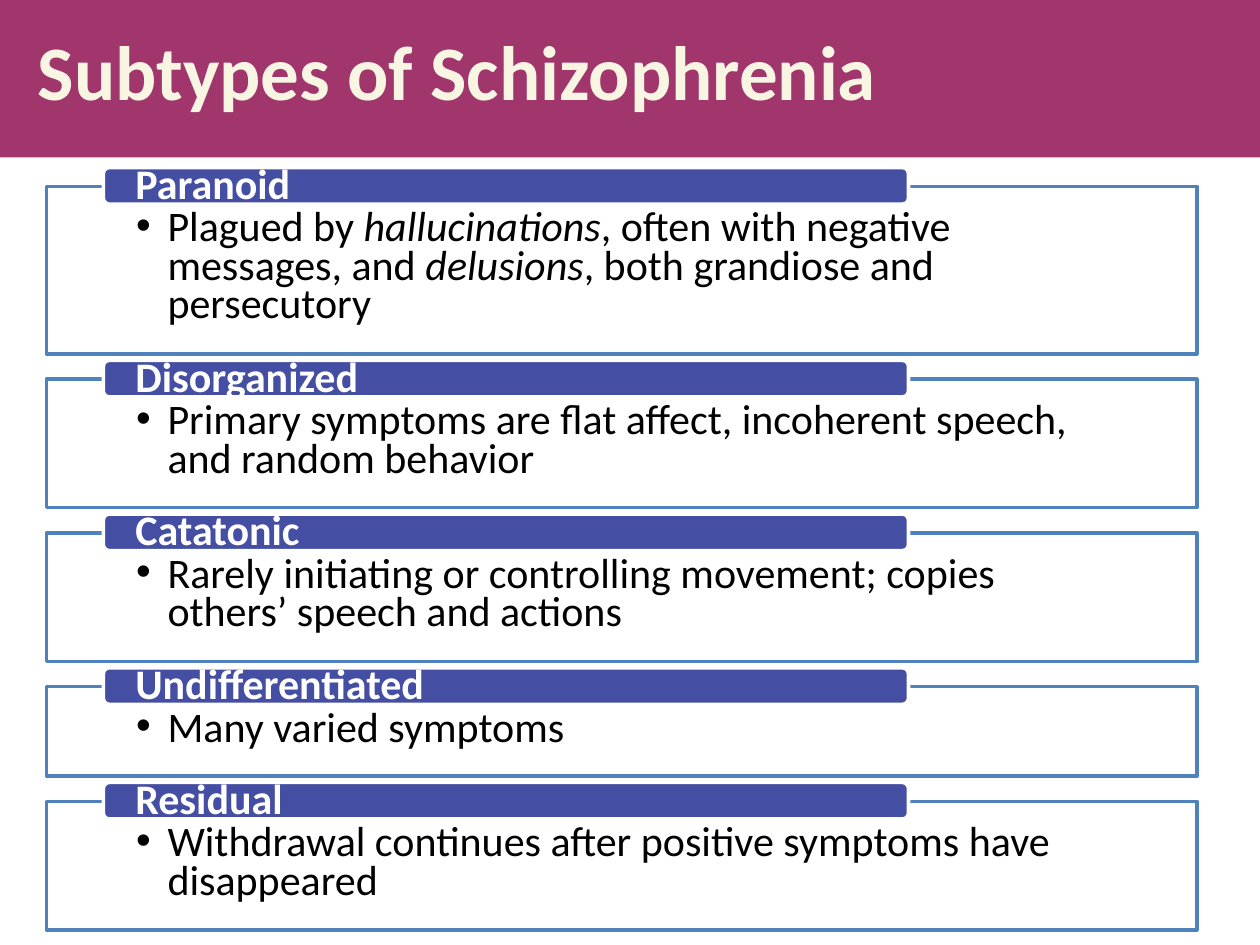
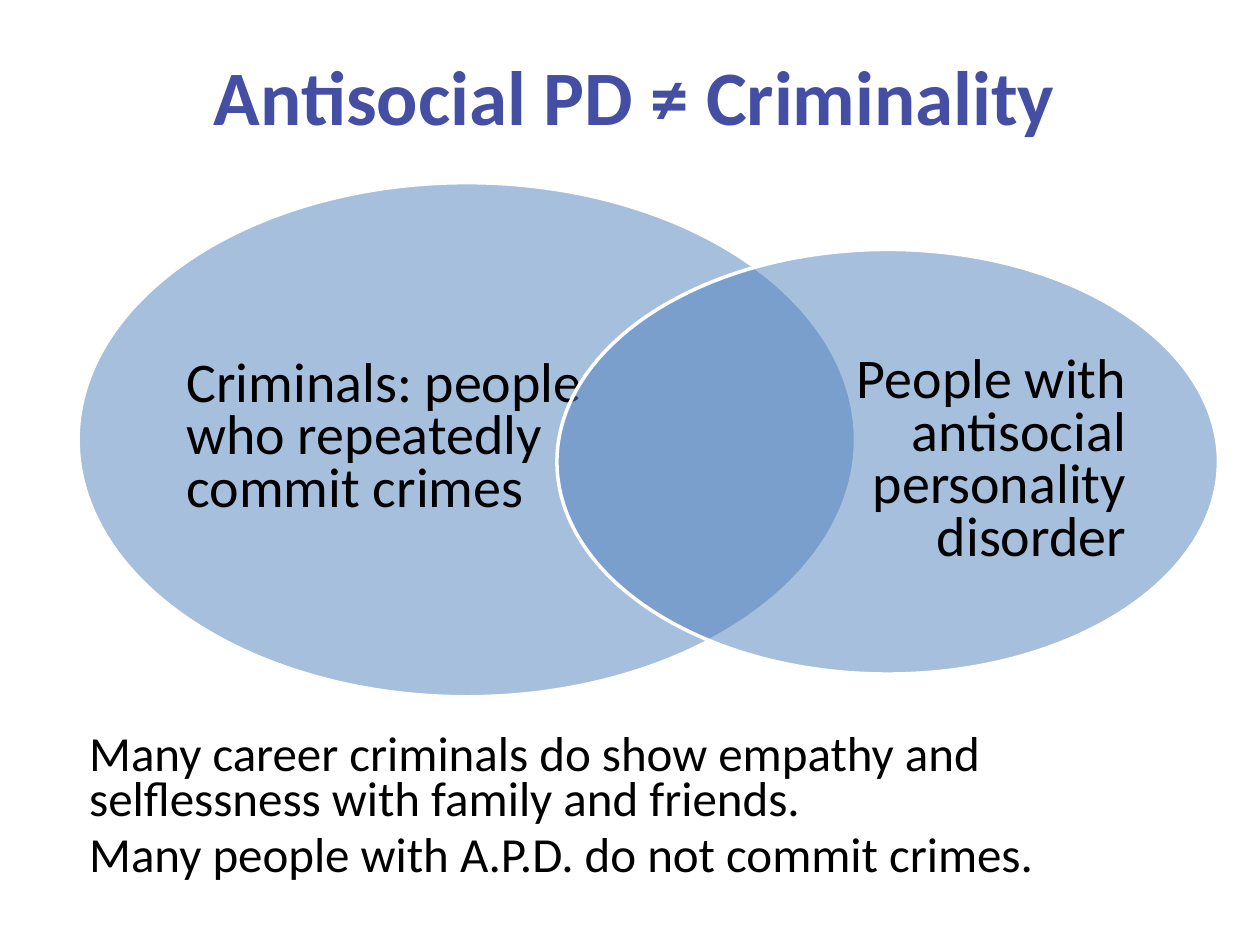
from dataclasses import dataclass

from lxml import etree
from pptx import Presentation
from pptx.dml.color import RGBColor
from pptx.enum.shapes import MSO_SHAPE
from pptx.enum.text import MSO_ANCHOR, MSO_AUTO_SIZE, PP_ALIGN
from pptx.oxml.ns import qn
from pptx.util import Inches, Pt

RECTANGLE, ROUNDED, OVAL = MSO_SHAPE.RECTANGLE, MSO_SHAPE.ROUNDED_RECTANGLE, MSO_SHAPE.OVAL
TOP, MIDDLE = MSO_ANCHOR.TOP, MSO_ANCHOR.MIDDLE
LEFT, CENTER, RIGHT = PP_ALIGN.LEFT, PP_ALIGN.CENTER, PP_ALIGN.RIGHT
TITLE_ONLY = 5

# Content: runs at odd positions of a description are italic
SUBTYPES_TITLE = "Subtypes of Schizophrenia"
SUBTYPES = [  # name, lines of text the box holds, description runs
    ("Paranoid", 3, ["Plagued by ", "hallucinations", ", often with negative messages, and ",
                     "delusions", ", both grandiose and persecutory"]),
    ("Disorganized", 2, ["Primary symptoms are flat affect, incoherent speech, and random behavior"]),
    ("Catatonic", 2, ["Rarely initiating or controlling movement; copies others’ speech and actions"]),
    ("Undifferentiated", 1, ["Many varied symptoms"]),
    ("Residual", 2, ["Withdrawal continues after positive symptoms have disappeared"]),
]

VENN_TITLE = "Antisocial PD ≠ Criminality"
VENN = [  # text, alignment, ellipse box, text box
    ("Criminals: people who repeatedly commit crimes", LEFT,
     (0.62, 1.45, 6.17, 4.08), (1.48, 1.93, 3.56, 3.12)),
    ("People with antisocial personality disorder", RIGHT,
     (4.42, 1.98, 5.25, 3.37), (5.91, 2.38, 3.03, 2.58)),
]
VENN_NOTES = ["Many career criminals do show empathy and selflessness with family and friends.",
              "Many people with A.P.D. do not commit crimes."]


@dataclass(frozen=True)
class Theme:
    font: str = "Calibri"
    plum: str = "A0366C"
    cream: str = "F8F6E3"
    indigo: str = "444EA2"
    blue: str = "4F81BD"
    white: str = "FFFFFF"
    black: str = "000000"
    title_size: int = 44
    venn_size: int = 32
    note_size: int = 28
    list_size: int = 24
    line_width: int = 2


THEME = Theme()

# Geometry of the subtype list
BOX_LEFT, BOX_WIDTH, FIRST_TOP, BOX_GAP = 0.37, 9.13, 1.48, 0.2
BOX_PADDING, LINE_HEIGHT = 0.4, 0.31
BAR_LEFT, BAR_WIDTH, BAR_HEIGHT, BAR_RISE = 0.82, 6.39, 0.29, 0.15


def inches(box):
    return [Inches(value) for value in box]


def set_frame(shape, anchor=TOP, insets=(0.1, 0.05, 0.1, 0.05)):
    settings = {"word_wrap": True, "auto_size": MSO_AUTO_SIZE.NONE, "vertical_anchor": anchor}
    for side, inset in zip(("left", "top", "right", "bottom"), insets):
        settings["margin_" + side] = Inches(inset)
    for name, value in settings.items():
        setattr(shape.text_frame, name, value)
    return shape.text_frame


def write(paragraph, runs, size, color, bold=False, **layout):
    for name, value in layout.items():
        setattr(paragraph, name, value)
    for index, text in enumerate(runs):
        run = paragraph.add_run()
        run.text = text
        formats = {"name": THEME.font, "size": Pt(size), "bold": bold, "italic": index % 2 == 1}
        for name, value in formats.items():
            setattr(run.font, name, value)
        run.font.color.rgb = RGBColor.from_string(color)


def add_bullet(paragraph, indent):
    properties = paragraph._p.get_or_add_pPr()
    properties.set("marL", str(Inches(indent)))
    properties.set("indent", str(-Inches(indent)))
    etree.SubElement(properties, qn("a:buFont"), typeface="Arial")
    etree.SubElement(properties, qn("a:buChar"), char="•")


def add_panel(slide, kind, box, fill, line, opacity=100):
    shape = slide.shapes.add_shape(kind, *inches(box))
    shape.shadow.inherit = False
    shape.fill.solid()
    shape.fill.fore_color.rgb = RGBColor.from_string(fill)
    shape.line.color.rgb = RGBColor.from_string(line)
    shape.line.width = Pt(THEME.line_width)
    if opacity < 100:
        color = shape.fill._xPr.find(qn("a:solidFill"))[0]
        etree.SubElement(color, qn("a:alpha"), val=str(opacity * 1000))
    return shape


def add_titled_slide(presentation, title, box, color, alignment, band=None, left_inset=0.1, **layout):
    slide = presentation.slides.add_slide(presentation.slide_layouts[TITLE_ONLY])
    shape = slide.shapes.title
    shape.left, shape.top, shape.width, shape.height = inches(box)
    if band:
        shape.fill.solid()
        shape.fill.fore_color.rgb = RGBColor.from_string(band)
    frame = set_frame(shape, MIDDLE, (left_inset, 0.05, 0.1, 0.05))
    write(frame.paragraphs[0], [title], THEME.title_size, color, True, alignment=alignment, **layout)
    return slide


def build_subtypes(presentation):
    slide = add_titled_slide(presentation, SUBTYPES_TITLE, (0, 0, 10, 1.25), THEME.cream, LEFT,
                             band=THEME.plum, left_inset=0.3, line_spacing=Pt(42))
    top = FIRST_TOP
    for name, lines, description in SUBTYPES:
        # Outlined description box
        height = BOX_PADDING + LINE_HEIGHT * lines
        box = add_panel(slide, RECTANGLE, (BOX_LEFT, top, BOX_WIDTH, height), THEME.white, THEME.blue)
        paragraph = set_frame(box, TOP, (0.71, 0.2, 0.71, 0.19)).paragraphs[0]
        write(paragraph, description, THEME.list_size, THEME.black,
              alignment=LEFT, line_spacing=Pt(22))
        add_bullet(paragraph, 0.25)

        # Name bar over the top edge
        bar = add_panel(slide, ROUNDED, (BAR_LEFT, top - BAR_RISE, BAR_WIDTH, BAR_HEIGHT),
                        THEME.indigo, THEME.white)
        paragraph = set_frame(bar, MIDDLE, (0.24, 0, 0.24, 0)).paragraphs[0]
        write(paragraph, [name], THEME.list_size, THEME.white, True, alignment=LEFT, line_spacing=0.9)
        top += height + BOX_GAP


def build_venn(presentation):
    slide = add_titled_slide(presentation, VENN_TITLE, (0.54, 0.13, 9, 1.25), THEME.indigo, CENTER)

    # Overlapping ellipses with their labels
    for text, alignment, ellipse_box, label_box in VENN:
        add_panel(slide, OVAL, ellipse_box, THEME.blue, THEME.white, opacity=50)
        label = slide.shapes.add_textbox(*inches(label_box))
        paragraph = set_frame(label, MIDDLE, (0, 0, 0, 0)).paragraphs[0]
        write(paragraph, [text], THEME.venn_size, THEME.black,
              alignment=alignment, line_spacing=Pt(30), space_after=Pt(6))

    # Notes under the diagram
    frame = set_frame(slide.shapes.add_textbox(*inches((0.61, 5.79, 8.85, 1.31))))
    for index, note in enumerate(VENN_NOTES):
        paragraph = frame.add_paragraph() if index else frame.paragraphs[0]
        write(paragraph, [note], THEME.note_size, THEME.black,
              line_spacing=Pt(26), space_after=Pt(6))


def main():
    presentation = Presentation()
    presentation.slide_width, presentation.slide_height = Inches(10), Inches(7.5)
    build_subtypes(presentation)
    build_venn(presentation)
    presentation.save("out.pptx")


if __name__ == "__main__":
    main()
